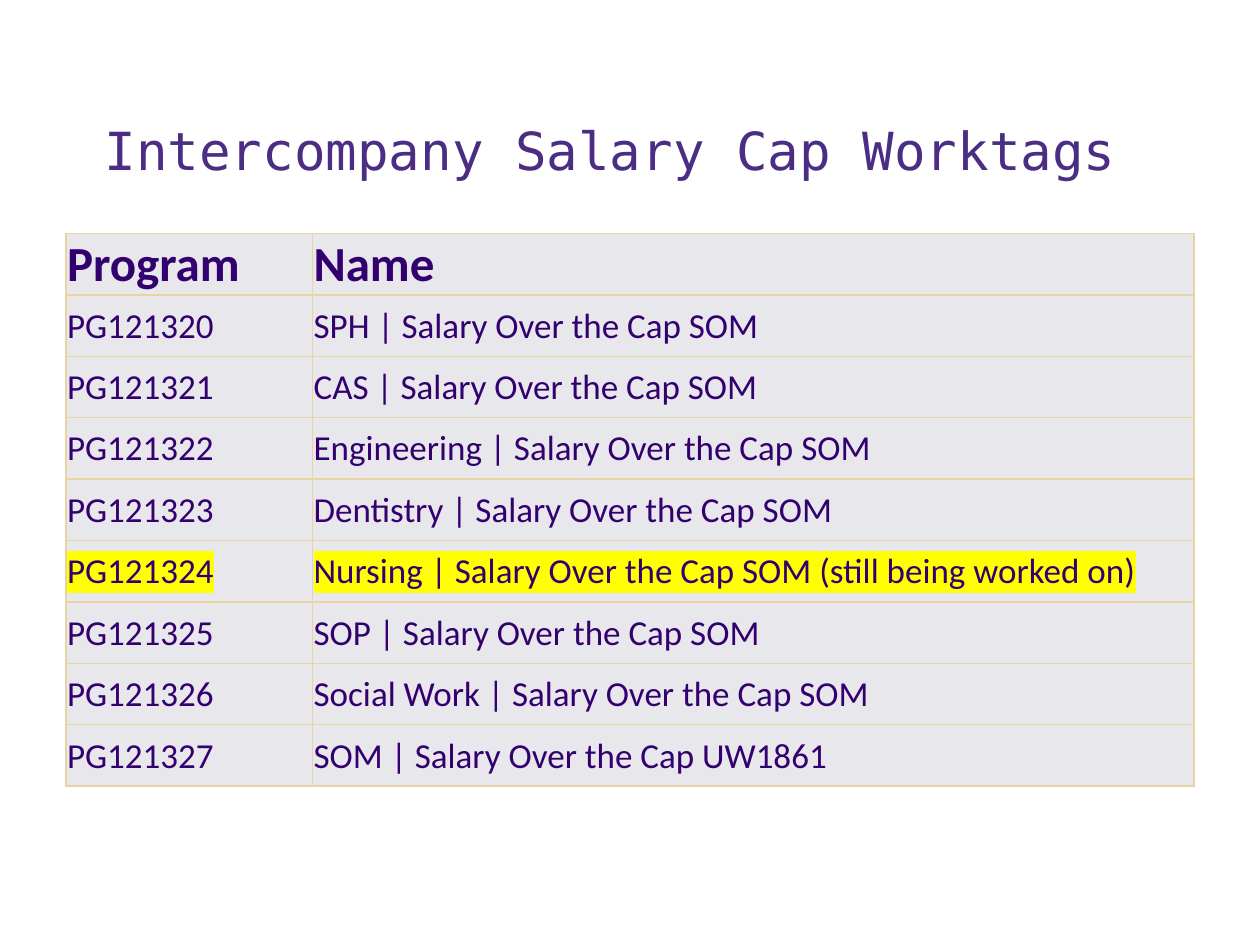
from lxml import etree
from pptx import Presentation
from pptx.dml.color import RGBColor
from pptx.enum.text import MSO_ANCHOR as Anchor
from pptx.oxml.ns import qn
from pptx.util import Pt

COLORS = {
    "title": "4B2E83",
    "text": "33006F",
    "cell": "E8E7EB",
    "border": "E8D3A2",
    "highlight": "FFFF00",
}
HEADER = ("Program", "Name")
FIRST_PROGRAM = 121320
NAMES = [
    "SPH | Salary Over the Cap SOM",
    "CAS | Salary Over the Cap SOM",
    "Engineering | Salary Over the Cap SOM",
    "Dentistry | Salary Over the Cap SOM",
    "Nursing | Salary Over the Cap SOM (still being worked on)",
    "SOP | Salary Over the Cap SOM",
    "Social Work | Salary Over the Cap SOM",
    "SOM | Salary Over the Cap UW1861",
]
PENDING_ROW = 5
COLUMN_WIDTHS = (Pt(140.9), Pt(503.7))
ROW_HEIGHT = Pt(35.12)


def add_run(paragraph, text, font_name, size, color, bold=False, highlight=None):
    run = paragraph.add_run()
    run.text = text
    run.font.size = Pt(size)
    run.font.bold = bold
    run.font.color.rgb = RGBColor.from_string(COLORS[color])
    if highlight:
        mark = etree.SubElement(run.font._element, qn("a:highlight"))
        etree.SubElement(mark, qn("a:srgbClr"), val=COLORS[highlight])
    run.font.name = font_name


def add_borders(cell):
    """Draw a 1 pt line on all four sides; borders must precede the fill."""
    properties = cell._tc.get_or_add_tcPr()
    for position, side in enumerate(("lnL", "lnR", "lnT", "lnB")):
        line = etree.Element(qn(f"a:{side}"), w=str(Pt(1)))
        fill = etree.SubElement(line, qn("a:solidFill"))
        etree.SubElement(fill, qn("a:srgbClr"), val=COLORS["border"])
        properties.insert(position, line)


presentation = Presentation()
presentation.slide_width = Pt(720)
presentation.slide_height = Pt(540)
slide = presentation.slides.add_slide(presentation.slide_layouts[6])

# Title
title = slide.shapes.add_textbox(Pt(52.6), Pt(29.5), Pt(644.4), Pt(77.8))
title.text_frame.word_wrap = True
title.text_frame.vertical_anchor = Anchor.BOTTOM
paragraph = title.text_frame.paragraphs[0]
paragraph.line_spacing = 0.9
add_run(paragraph, "Intercompany Salary Cap Worktags", "DejaVu Sans Mono", 30, "title")

# Worktag table
rows = [HEADER] + [(f"PG{FIRST_PROGRAM + i}", name) for i, name in enumerate(NAMES)]
table = slide.shapes.add_table(
    len(rows), len(HEADER), Pt(37.6), Pt(133.4),
    sum(COLUMN_WIDTHS), ROW_HEIGHT * len(rows),
).table
for column, width in zip(table.columns, COLUMN_WIDTHS):
    column.width = width

for row_index, row in enumerate(rows):
    table.rows[row_index].height = ROW_HEIGHT
    is_header = row_index == 0
    for column_index, text in enumerate(row):
        cell = table.cell(row_index, column_index)
        cell.margin_left = cell.margin_right = cell.margin_top = Pt(0.75)
        cell.margin_bottom = Pt(0)
        cell.vertical_anchor = Anchor.BOTTOM if is_header else Anchor.MIDDLE
        cell.fill.solid()
        cell.fill.fore_color.rgb = RGBColor.from_string(COLORS["cell"])
        add_borders(cell)
        add_run(
            cell.text_frame.paragraphs[0], text, "Calibri",
            28 if is_header else 20, "text", bold=is_header,
            highlight="highlight" if row_index == PENDING_ROW else None,
        )

presentation.save("out.pptx")
